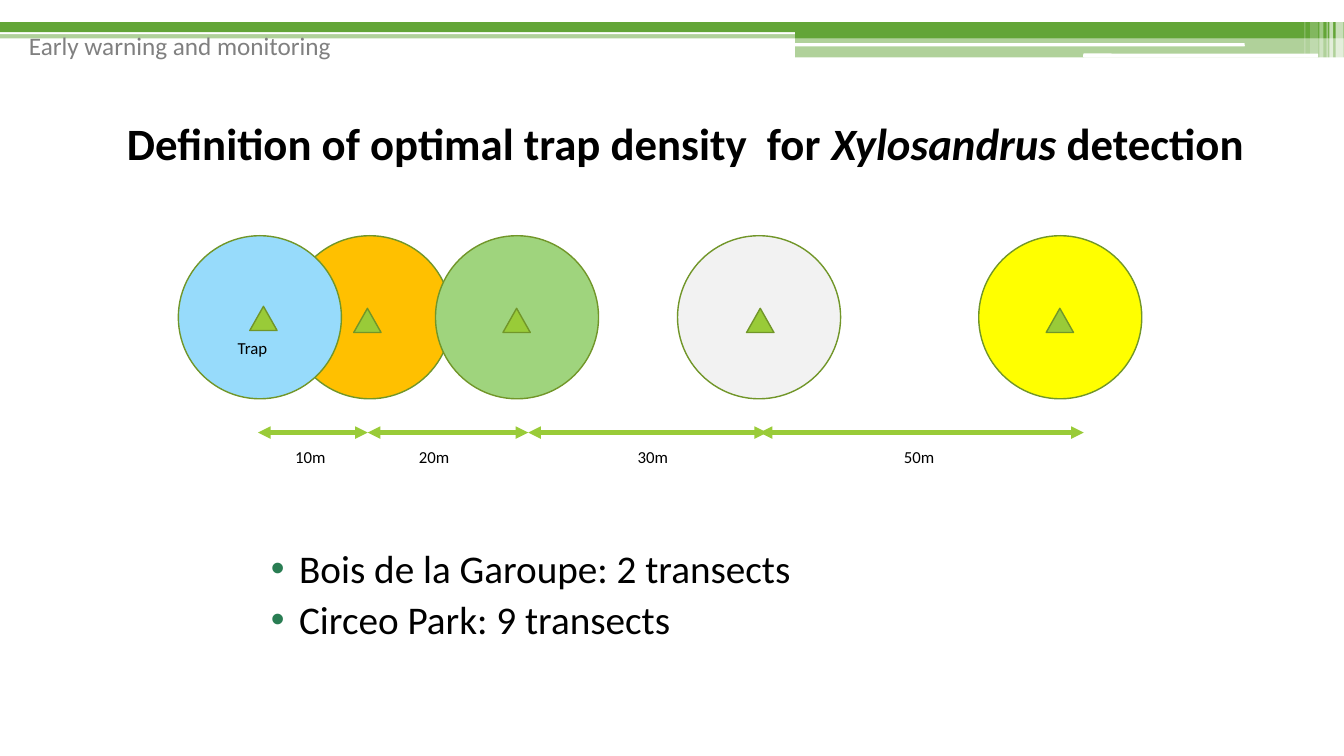
from lxml import etree
from pptx import Presentation
from pptx import util as u
from pptx.dml.color import RGBColor
from pptx.enum import shapes, text
from pptx.oxml.ns import qn

COLORS = {
    "green": "63A537", "white": "FFFFFF", "grey": "808080", "black": "000000",
    "lime": "99CB38", "outline": "719629", "bullet": "297D53",
    "orange": "FFC000", "leaf": "9FD47D", "pale": "F2F2F2",
    "yellow": "FFFF00", "blue": "97DBFB",
}
FONT = "Calibri"

HEADER = "Early warning and monitoring"
TITLE = [
    ("Definition of optimal trap density  for ", False),
    ("Xylosandrus ", True),
    ("detection ", False),
]
SITES = ["Bois de la Garoupe: 2 transects", "Circeo Park: 9 transects"]

RECT = shapes.MSO_SHAPE.RECTANGLE
ROUNDED = shapes.MSO_SHAPE.ROUNDED_RECTANGLE
BANDS = [
    (RECT, 0, 0.74, 33.87, 0.23, "green", 50),
    (RECT, 0, 0, 33.87, 0.86, "white", 100),
    (RECT, 0, 0.56, 33.87, 0.25, "green", 100),
    (RECT, 20.04, 0.71, 13.83, 0.25, "green", 100),
    (RECT, 20.04, 0.94, 13.83, 0.51, "green", 50),
    (ROUNDED, 20.02, 1.09, 11.35, 0.08, "white", 100),
    (ROUNDED, 27.3, 1.35, 5.92, 0.1, "white", 100),
]
STRIPES = [
    (33.66, 0.2, 1.73, 65), (33.5, 0.1, 1.73, 65), (33.43, 0.03, 1.73, 60),
    (33.25, 0.1, 1.73, 40), (33.02, 0.2, 1.63, 20), (32.87, 0.03, 1.63, 30),
]

ZONES = [
    ("orange", 9.32, 9.26, 7.77),
    ("leaf", 13.03, 13.02, 7.77),
    ("pale", 19.13, 19.16, 7.77),
    ("yellow", 26.72, 26.71, 7.77),
    ("blue", 6.55, 6.64, 7.72),
]
ZONE_TOP, ZONE_SIZE = 5.94, 4.11
TRAP_WIDTH, TRAP_HEIGHT = 0.69, 0.61
DISTANCES = [
    ("10m", 6.5, 9.27, 7.19),
    ("20m", 9.27, 13.31, 10.31),
    ("30m", 13.31, 19.33, 15.82),
    ("50m", 19.15, 27.31, 22.53),
]
DISTANCE_Y, LABEL_TOP = 10.9, 11.13

deck = Presentation()
deck.slide_width, deck.slide_height = u.Cm(33.87), u.Cm(19.05)
slide = deck.slides.add_slide(deck.slide_layouts[5])


def rgb(color):
    return RGBColor.from_string(COLORS[color])


def add_figure(kind, left, top, width, height, color, opacity=100, outline=None):
    figure = slide.shapes.add_shape(kind, *map(u.Cm, (left, top, width, height)))
    figure.shadow.inherit = False
    figure.fill.solid()
    figure.fill.fore_color.rgb = rgb(color)
    if opacity < 100:
        tint = figure.fill._xPr.find(".//" + qn("a:srgbClr"))
        etree.SubElement(tint, qn("a:alpha"), val=str(opacity * 1000))
    if outline:
        figure.line.color.rgb = rgb(outline)
        figure.line.width = u.Pt(1)
    else:
        figure.line.fill.background()


def add_run(paragraph, words, size, color="black", bold=False, italic=False):
    run = paragraph.add_run()
    run.text = words
    run.font.name, run.font.size = FONT, u.Pt(size)
    run.font.bold, run.font.italic = bold, italic
    run.font.color.rgb = rgb(color)


def add_box(left, top, width, height, wrap=True):
    frame = slide.shapes.add_textbox(*map(u.Cm, (left, top, width, height))).text_frame
    frame.word_wrap = wrap
    frame.auto_size = text.MSO_AUTO_SIZE.SHAPE_TO_FIT_TEXT
    return frame


def add_label(words, left, top):
    add_run(add_box(left, top, 1.55, 0.94, wrap=False).paragraphs[0], words, 12)


def add_distance(start, end):
    span = slide.shapes.add_connector(
        shapes.MSO_CONNECTOR.STRAIGHT,
        *map(u.Cm, (start, DISTANCE_Y, end, DISTANCE_Y)))
    span.line.color.rgb = rgb("lime")
    span.line.width = u.Pt(3)
    for tip in ("a:headEnd", "a:tailEnd"):
        etree.SubElement(span.line._get_or_add_ln(), qn(tip), type="triangle")
    etree.SubElement(span._element.spPr, qn("a:effectLst"))


for band in BANDS:
    add_figure(*band)
for left, width, height, opacity in STRIPES:
    add_figure(RECT, left, 0, width, height, "white", opacity)
add_run(add_box(0.48, 0.64, 20.98, 1.02).paragraphs[0], HEADER, 18, "grey")

for color, center, _, _ in ZONES:
    add_figure(shapes.MSO_SHAPE.OVAL, center - ZONE_SIZE / 2, ZONE_TOP,
               ZONE_SIZE, ZONE_SIZE, color, outline="outline")
for distance, start, end, label_left in DISTANCES:
    add_distance(start, end)
    add_label(distance, label_left, LABEL_TOP)
add_label("Trap", 5.74, 8.38)
for _, _, trap_center, trap_top in ZONES:
    add_figure(shapes.MSO_SHAPE.ISOSCELES_TRIANGLE, trap_center - TRAP_WIDTH / 2,
               trap_top, TRAP_WIDTH, TRAP_HEIGHT, "lime", outline="outline")

title = slide.shapes.title
title.left, title.top, title.width, title.height = map(u.Cm, (1.65, 2.79, 30.23, 1.63))
title.text_frame.word_wrap = True
title.text_frame.auto_size = text.MSO_AUTO_SIZE.NONE
title.text_frame.vertical_anchor = text.MSO_ANCHOR.TOP
heading = title.text_frame.paragraphs[0]
heading.alignment = text.PP_ALIGN.CENTER
heading._p.get_or_add_pPr().set("marL", str(u.Cm(1.27)))
for words, italic in TITLE:
    add_run(heading, words, 32, bold=True, italic=italic)

site_list = add_box(6.27, 13.59, 21.89, 2.67)
site_list.auto_size = text.MSO_AUTO_SIZE.NONE
for number, site in enumerate(SITES):
    item = site_list.add_paragraph() if number else site_list.paragraphs[0]
    props = item._p.get_or_add_pPr()
    props.set("marL", str(u.Cm(1.02)))
    props.set("indent", str(u.Cm(-0.71)))
    bullet_color = etree.SubElement(props, qn("a:buClr"))
    etree.SubElement(bullet_color, qn("a:srgbClr"), val=COLORS["bullet"])
    etree.SubElement(props, qn("a:buFont"), typeface="Arial")
    etree.SubElement(props, qn("a:buChar"), char="•")
    if number:
        item.space_before = u.Pt(3)
    add_run(item, site, 28)

deck.save("out.pptx")
